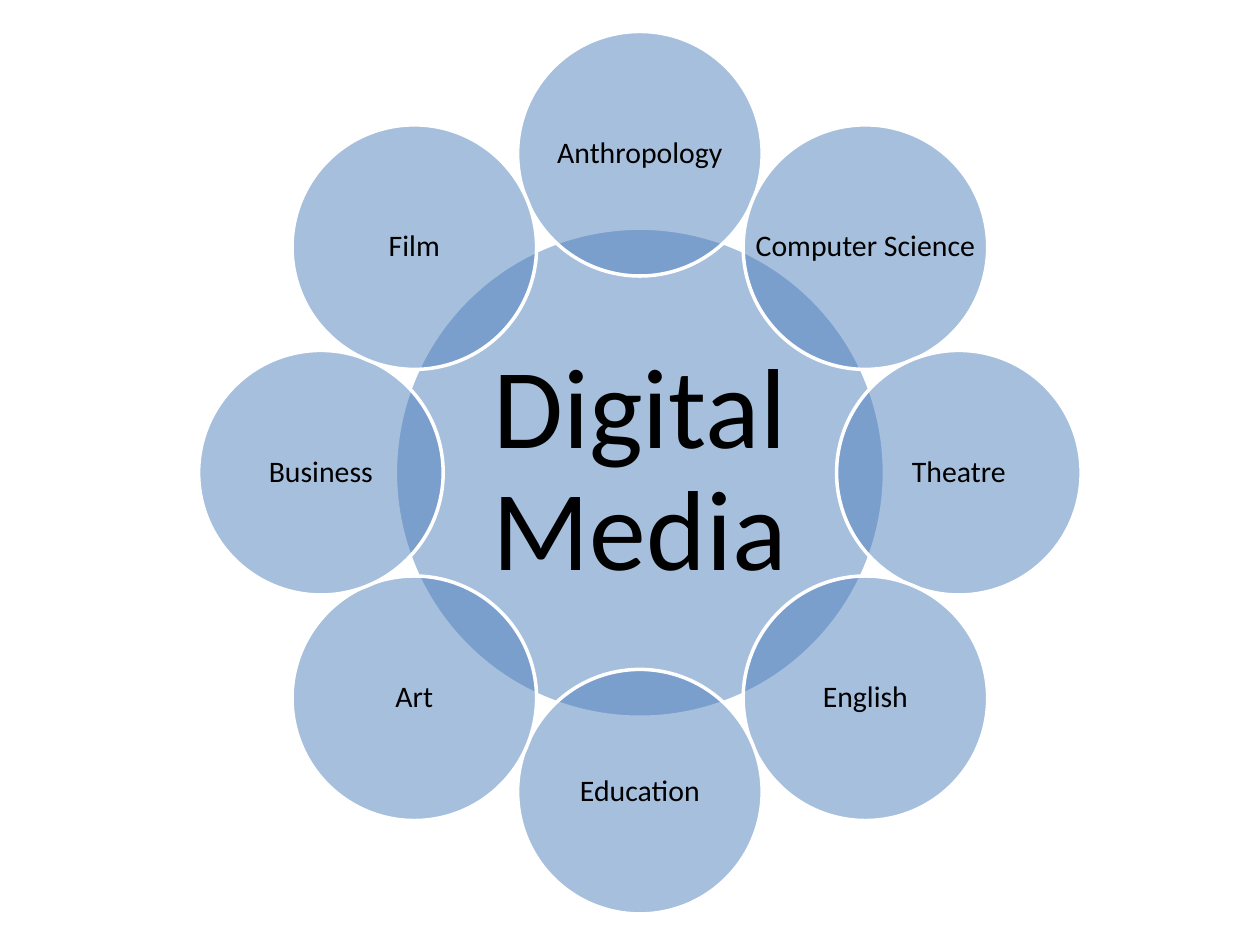
import math

from lxml import etree
from pptx import Presentation
from pptx import util as u
from pptx.dml.color import RGBColor
from pptx.enum import shapes, text
from pptx.oxml.ns import qn

COLORS = {"circle": "4F81BD", "outline": "FFFFFF", "label": "000000"}
CENTER_X, CENTER_Y = 12.9, 9.53
ORBIT = 6.43
HUB_DIAMETER = 9.86
FIELD_DIAMETER = HUB_DIAMETER / 2

prs = Presentation()
prs.slide_width, prs.slide_height = u.Cm(25.4), u.Cm(19.05)
slide = prs.slides.add_slide(prs.slide_layouts[6])


def add_circle(label, x, y, diameter, size, inset, wrap):
    """Add a half-transparent labelled circle centred on x, y (in cm)."""
    circle = slide.shapes.add_shape(
        shapes.MSO_SHAPE.OVAL, u.Cm(x - diameter / 2), u.Cm(y - diameter / 2),
        u.Cm(diameter), u.Cm(diameter))
    circle.shadow.inherit = False
    circle.fill.solid()
    circle.fill.fore_color.rgb = RGBColor.from_string(COLORS["circle"])
    tint = circle._element.spPr.find(qn("a:solidFill")).find(qn("a:srgbClr"))
    etree.SubElement(tint, qn("a:alpha"), val="50000")
    circle.line.color.rgb = RGBColor.from_string(COLORS["outline"])
    circle.line.width = u.Pt(2)

    frame = circle.text_frame
    frame.text = label
    frame.word_wrap = wrap
    frame.vertical_anchor = text.MSO_ANCHOR.MIDDLE
    frame.margin_left = frame.margin_right = u.Cm(inset)
    frame.margin_top = frame.margin_bottom = u.Cm(inset)
    paragraph = frame.paragraphs[0]
    paragraph.alignment = text.PP_ALIGN.CENTER
    paragraph.line_spacing = 0.9
    font = paragraph.runs[0].font
    font.name = "Calibri"
    font.size = u.Pt(size)
    font.color.rgb = RGBColor.from_string(COLORS["label"])


add_circle("Digital Media", CENTER_X, CENTER_Y, HUB_DIAMETER, 65, 0.23, True)

# Fields run clockwise from the top of the hub.
fields = ["Anthropology", "Computer Science", "Theatre", "English",
          "Education", "Art", "Business", "Film"]
for position, field in enumerate(fields):
    angle = 2 * math.pi * position / len(fields)
    add_circle(field, CENTER_X + ORBIT * math.sin(angle),
               CENTER_Y - ORBIT * math.cos(angle), FIELD_DIAMETER, 17, 0.05, False)

prs.save("out.pptx")
